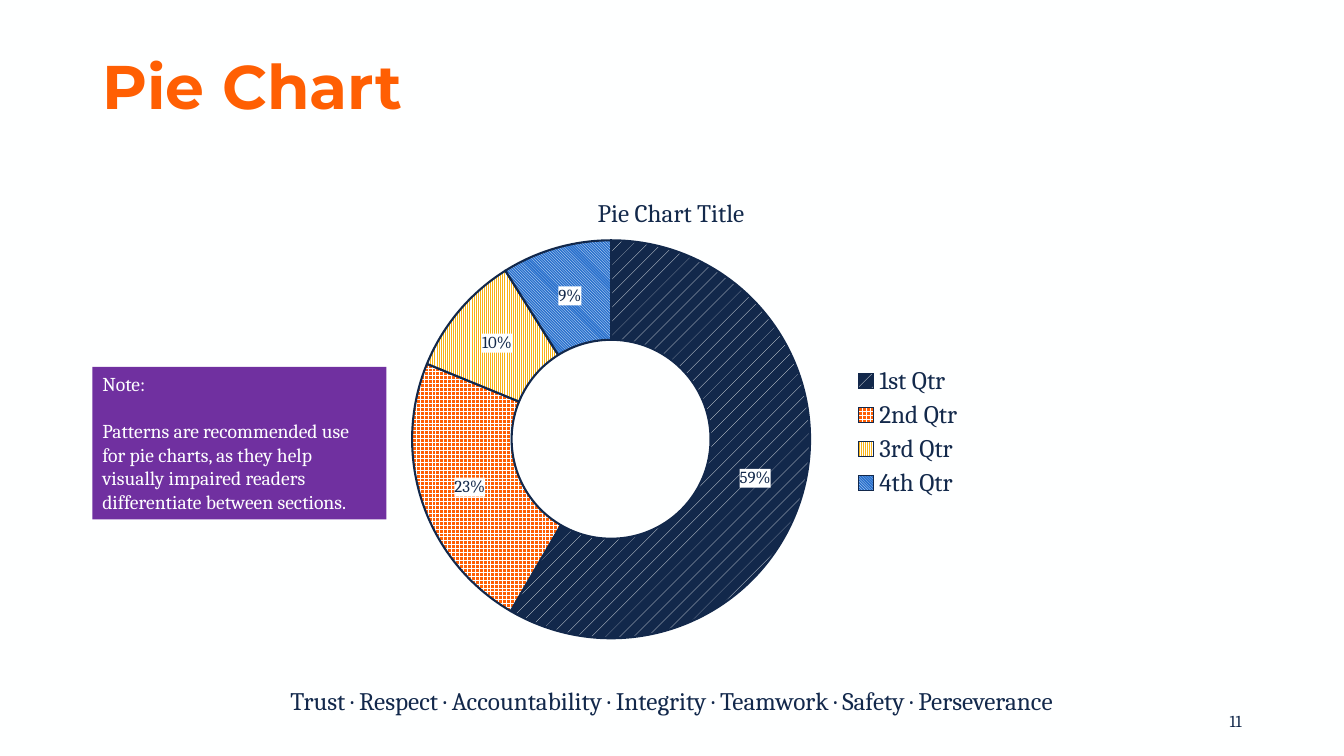
from lxml import etree
from pptx import Presentation
from pptx.chart.data import CategoryChartData
from pptx.dml.color import RGBColor
from pptx.enum import chart as charts, dml, shapes, text
from pptx.oxml import parse_xml
from pptx.oxml.ns import nsdecls, qn
from pptx.util import Pt

NAVY, CHART_NAVY, ORANGE, WHITE = "12284B", "13294B", "FF5F03", "FEFFFF"
PURPLE, YELLOW, BLUE = "7030A0", "F8B316", "2870CD"

QUARTERS = [
    ("1st Qtr", 59, dml.MSO_PATTERN.PERCENT_5, NAVY),
    ("2nd Qtr", 23, dml.MSO_PATTERN.LARGE_GRID, ORANGE),
    ("3rd Qtr", 10, dml.MSO_PATTERN.LIGHT_VERTICAL, YELLOW),
    ("4th Qtr", 9, dml.MSO_PATTERN.LIGHT_DOWNWARD_DIAGONAL, BLUE),
]
NOTE = ["Note:", "Patterns are recommended use for pie charts, as they help "
        "visually impaired readers differentiate between sections."]
VALUES = "Trust · Respect · Accountability · Integrity · Teamwork · Safety · Perseverance"


def color(value):
    return RGBColor.from_string(value)


def style_font(font, size, shade, name="Cambria", bold=False):
    font.size, font.name, font.bold = Pt(size), name, bold
    font.color.rgb = color(shade)


def write(box, lines, size, shade, align=text.PP_ALIGN.LEFT, gap=0, **font):
    """Fill a shape with paragraphs, with a gap in points between them."""
    frame = box.text_frame
    frame.word_wrap = True
    frame.text = "\n".join(lines)
    for index, para in enumerate(frame.paragraphs):
        para.alignment = align
        if index:
            para.space_before = Pt(gap)
        for span in para.runs:
            style_font(span.font, size, shade, **font)
    return frame


def add_text(page, area, line, size, shade, **options):
    box = page.shapes.add_textbox(*map(Pt, area))
    return write(box, [line], size, shade, **options)


def add_note(page, area):
    box = page.shapes.add_shape(shapes.MSO_SHAPE.RECTANGLE, *map(Pt, area))
    box.shadow.inherit = False
    box.fill.solid()
    box.fill.fore_color.rgb = color(PURPLE)
    box.line.fill.background()
    frame = write(box, NOTE, 14, WHITE, gap=17)
    frame.vertical_anchor = text.MSO_ANCHOR.TOP


def place(part, before, inner=False, **fractions):
    """Fix a chart part at fractions of the chart area."""
    for old in part.findall(qn("c:layout")):
        part.remove(old)
    layout = etree.Element(qn("c:layout"))
    manual = etree.SubElement(layout, qn("c:manualLayout"))
    if inner:
        etree.SubElement(manual, qn("c:layoutTarget"), val="inner")
    for mode in ("xMode", "yMode"):
        etree.SubElement(manual, qn(f"c:{mode}"), val="edge")
    for name, value in fractions.items():
        etree.SubElement(manual, qn(f"c:{name}"), val=str(value))
    part.find(qn(f"c:{before}")).addprevious(layout)


def add_doughnut(page, area):
    data = CategoryChartData()
    data.categories = [quarter[0] for quarter in QUARTERS]
    data.add_series("Series 1", [quarter[1] for quarter in QUARTERS])
    chart = page.shapes.add_chart(charts.XL_CHART_TYPE.DOUGHNUT, *map(Pt, area), data).chart
    style_font(chart.font, 10, CHART_NAVY)

    chart.has_title = True
    title = chart.chart_title
    title.text_frame.text = "Pie Chart Title"
    style_font(title.text_frame.paragraphs[0].runs[0].font, 18, CHART_NAVY)
    place(title._element, "overlay", x=0.39, y=0.05)

    chart.has_legend = True
    legend = chart.legend
    legend.position = charts.XL_LEGEND_POSITION.RIGHT
    legend.include_in_layout = False
    style_font(legend.font, 18, CHART_NAVY)
    place(legend._element, "overlay", x=0.75, y=0.4, w=0.15, h=0.29)

    plot = chart.plots[0]
    plot.vary_by_categories = True
    plot._element.find(qn("c:holeSize")).set("val", "65")
    place(chart._chartSpace.chart.plotArea, "doughnutChart", inner=True,
          x=0.14, y=0.15, w=0.55, h=0.82)
    series = plot.series[0]
    for index, (_, _, pattern, shade) in enumerate(QUARTERS):
        look = series.points[index].format
        look.fill.patterned()
        look.fill.pattern = pattern
        look.fill.fore_color.rgb = color(WHITE)
        look.fill.back_color.rgb = color(shade)
        look.line.color.rgb = color(NAVY)
        look.line.width = Pt(1.5)

    labels = series.data_labels
    labels.show_value = True
    labels.number_format = '0"%"'
    labels.number_format_is_linked = False
    style_font(labels.font, 12, CHART_NAVY)
    labels._element.find(qn("c:txPr")).addprevious(parse_xml(
        f'<c:spPr {nsdecls("c", "a")}><a:solidFill><a:srgbClr val="{WHITE}"/>'
        '</a:solidFill></c:spPr>'))


def main():
    deck = Presentation()
    deck.slide_width, deck.slide_height = Pt(960), Pt(540)
    page = deck.slides.add_slide(deck.slide_layouts[6])
    page.background.fill.solid()
    page.background.fill.fore_color.rgb = color(WHITE)

    number = add_text(page, (678, 500.4, 216, 28.8), "11", 12, NAVY,
                      align=text.PP_ALIGN.RIGHT)
    number.vertical_anchor = text.MSO_ANCHOR.MIDDLE
    add_note(page, (66, 262, 210, 109))
    add_doughnut(page, (222, 119.5, 517, 347))
    title = add_text(page, (66, 28.8, 828, 70.6), "Pie Chart", 44, ORANGE,
                     name="Montserrat", bold=True)
    title.vertical_anchor = text.MSO_ANCHOR.MIDDLE
    title.paragraphs[0].line_spacing = 0.9
    add_text(page, (130.3, 486, 699, 29), VALUES, 18, NAVY, align=text.PP_ALIGN.CENTER)
    deck.save("out.pptx")


if __name__ == "__main__":
    main()
